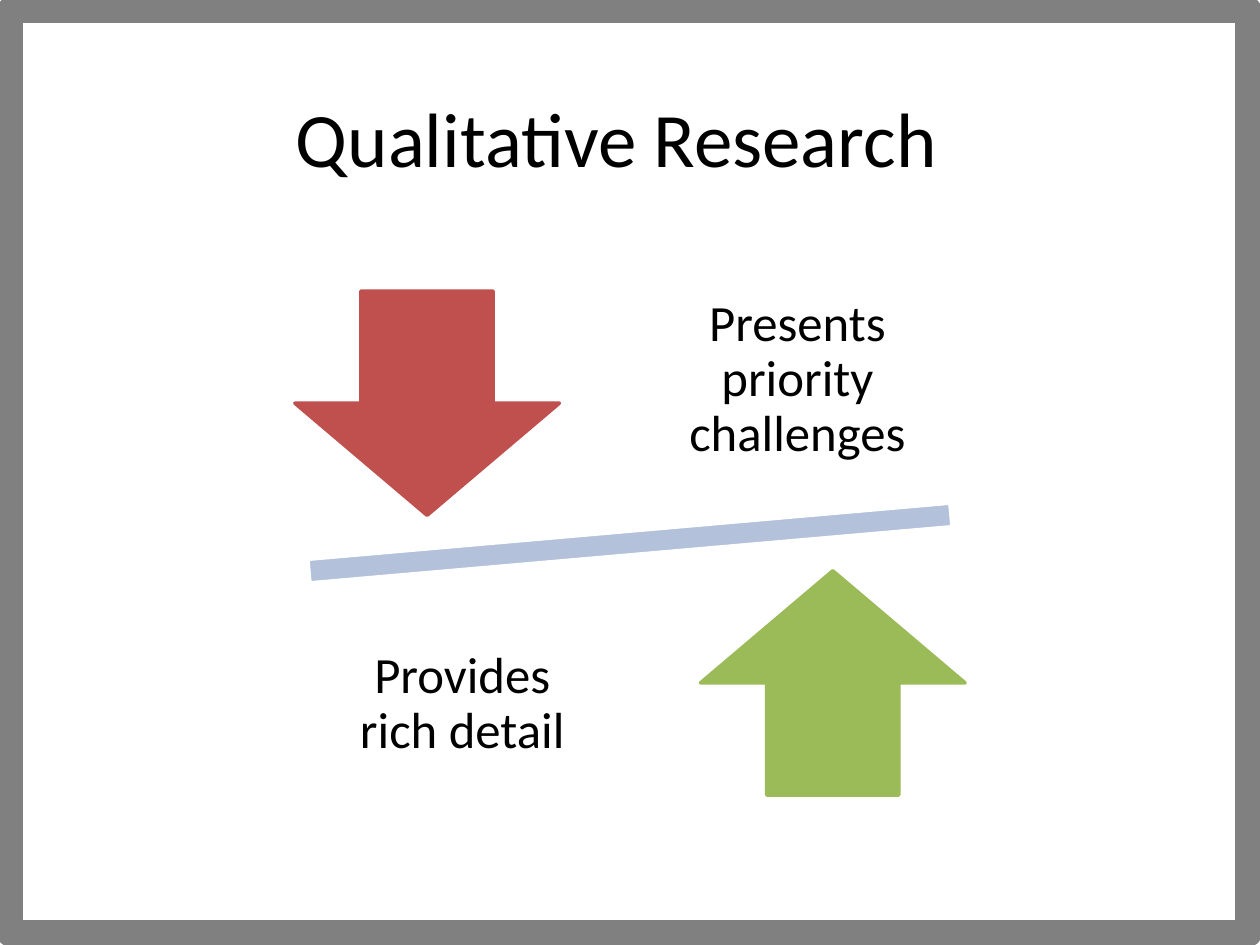
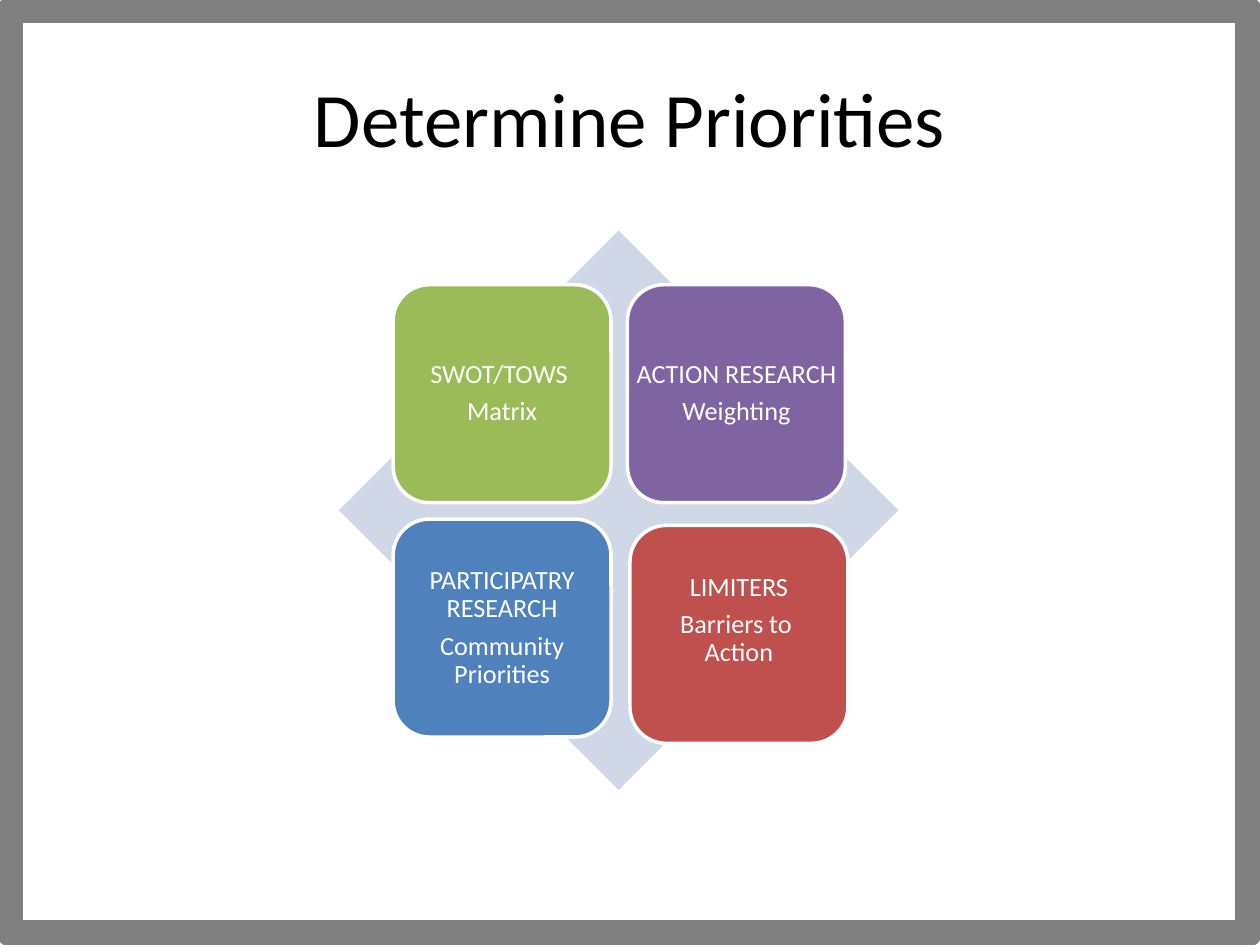
"""Build two slides on qualitative research and setting priorities."""
from dataclasses import dataclass

from pptx import Presentation
from pptx.dml.color import RGBColor
from pptx.enum.shapes import MSO_SHAPE
from pptx.enum.text import MSO_ANCHOR, PP_ALIGN
from pptx.slide import Slide
from pptx.util import Inches, Pt

FONT = "Calibri"
COLORS = {
    "white": "FFFFFF", "black": "000000", "frame": "808080",
    "red": "C0504D", "green": "9BBB59", "purple": "8064A2", "blue": "4F81BD",
    "beam": "B3C1DB", "diamond": "D0D8E8",
}


@dataclass(frozen=True)
class Box:
    left: float
    top: float
    width: float
    height: float

    def lengths(self) -> tuple:
        return tuple(Inches(v) for v in (self.left, self.top, self.width, self.height))


@dataclass(frozen=True)
class TextStyle:
    size: float
    color: str = "black"
    align: PP_ALIGN = PP_ALIGN.CENTER
    anchor: MSO_ANCHOR = MSO_ANCHOR.MIDDLE
    inset: float | None = None
    line_spacing: float = 1.0
    space_after: float = 0


@dataclass(frozen=True)
class Arrow:
    kind: MSO_SHAPE
    color: str
    box: Box
    label: str
    label_box: Box


@dataclass(frozen=True)
class Tile:
    color: str
    left: float
    top: float
    lines: tuple[str, ...]
    tight_after: int | None = None
    lift: float = 0


TITLE = TextStyle(44)
LEFT_TITLE = TextStyle(44, align=PP_ALIGN.LEFT, anchor=MSO_ANCHOR.TOP)
ARROW_LABEL = TextStyle(29, inset=0.23, line_spacing=0.9)
TILE_TEXT = TextStyle(15, "white", inset=0.06, line_spacing=0.9, space_after=5)
TILE_SIZE = 1.73

ARROWS = (
    Arrow(MSO_SHAPE.DOWN_ARROW, "red", Box(2.34, 2.31, 2.1, 1.78),
          "Presents priority challenges", Box(5.21, 2.08, 2.24, 1.87)),
    Arrow(MSO_SHAPE.UP_ARROW, "green", Box(5.56, 4.53, 2.1, 1.78),
          "Provides rich detail", Box(2.55, 4.66, 2.24, 1.87)),
)
TILES = (
    Tile("green", 3.12, 2.26, ("SWOT/TOWS ", "Matrix")),
    Tile("purple", 4.98, 2.26, ("ACTION RESEARCH", "Weighting")),
    Tile("blue", 3.12, 4.12, ("PARTICIPATRY RESEARCH", "Community Priorities")),
    Tile("red", 5, 4.17, ("LIMITERS", "Barriers to ", "Action"), tight_after=1, lift=0.11),
)


def rgb(name: str) -> RGBColor:
    return RGBColor.from_string(COLORS[name])


def add_shape(slide: Slide, kind: MSO_SHAPE, box: Box, fill: str,
              line: str | None = None, line_width: float = 2, rotation: float = 0) -> None:
    shape = slide.shapes.add_shape(kind, *box.lengths())
    shape.shadow.inherit = False
    shape.rotation = rotation
    shape.fill.solid()
    shape.fill.fore_color.rgb = rgb(fill)
    if line is None:
        shape.line.fill.background()
    else:
        shape.line.color.rgb = rgb(line)
        shape.line.width = Pt(line_width)


def add_text(slide: Slide, box: Box, lines: tuple[str, ...], style: TextStyle,
             tight_after: int | None = None) -> None:
    frame = slide.shapes.add_textbox(*box.lengths()).text_frame
    frame.word_wrap = True
    frame.vertical_anchor = style.anchor
    if style.inset is not None:
        frame.margin_left = frame.margin_right = Inches(style.inset)
        frame.margin_top = frame.margin_bottom = Inches(style.inset)
    for index, line in enumerate(lines):
        paragraph = frame.add_paragraph() if index else frame.paragraphs[0]
        paragraph.text = line
        paragraph.alignment = style.align
        paragraph.line_spacing = style.line_spacing
        is_tight = index in (tight_after, len(lines) - 1)
        paragraph.space_after = Pt(0 if is_tight else style.space_after)
        paragraph.font.name = FONT
        paragraph.font.size = Pt(style.size)
        paragraph.font.color.rgb = rgb(style.color)


def add_framed_slide(presentation: Presentation, title: str, box: Box,
                     style: TextStyle) -> Slide:
    slide = presentation.slides.add_slide(presentation.slide_layouts[6])
    add_shape(slide, MSO_SHAPE.RECTANGLE, Box(0.08, 0.08, 9.83, 7.33), "white", "frame", 15)
    add_text(slide, box, (title,), style)
    return slide


def build_research_slide(presentation: Presentation) -> None:
    slide = add_framed_slide(presentation, "Qualitative Research",
                             Box(2.25, 0.67, 5.5, 0.84), LEFT_TITLE)
    add_shape(slide, MSO_SHAPE.MATH_MINUS, Box(1.52, 3.91, 6.96, 0.8),
              "beam", "white", rotation=-5)
    for arrow in ARROWS:
        add_shape(slide, arrow.kind, arrow.box, arrow.color, arrow.color)
        add_text(slide, arrow.label_box, (arrow.label,), ARROW_LABEL)


def build_priorities_slide(presentation: Presentation) -> None:
    slide = add_framed_slide(presentation, "Determine Priorities",
                             Box(0.5, 0.3, 9, 1.25), TITLE)
    add_shape(slide, MSO_SHAPE.DIAMOND, Box(2.69, 1.83, 4.44, 4.44), "diamond")
    for tile in TILES:
        add_shape(slide, MSO_SHAPE.ROUNDED_RECTANGLE,
                  Box(tile.left, tile.top, TILE_SIZE, TILE_SIZE), tile.color, "white")
        add_text(slide, Box(tile.left, tile.top, TILE_SIZE, TILE_SIZE - 2 * tile.lift),
                 tile.lines, TILE_TEXT, tile.tight_after)


def main() -> None:
    presentation = Presentation()
    presentation.slide_width = Inches(10)
    presentation.slide_height = Inches(7.5)
    build_research_slide(presentation)
    build_priorities_slide(presentation)
    presentation.save("out.pptx")


if __name__ == "__main__":
    main()
